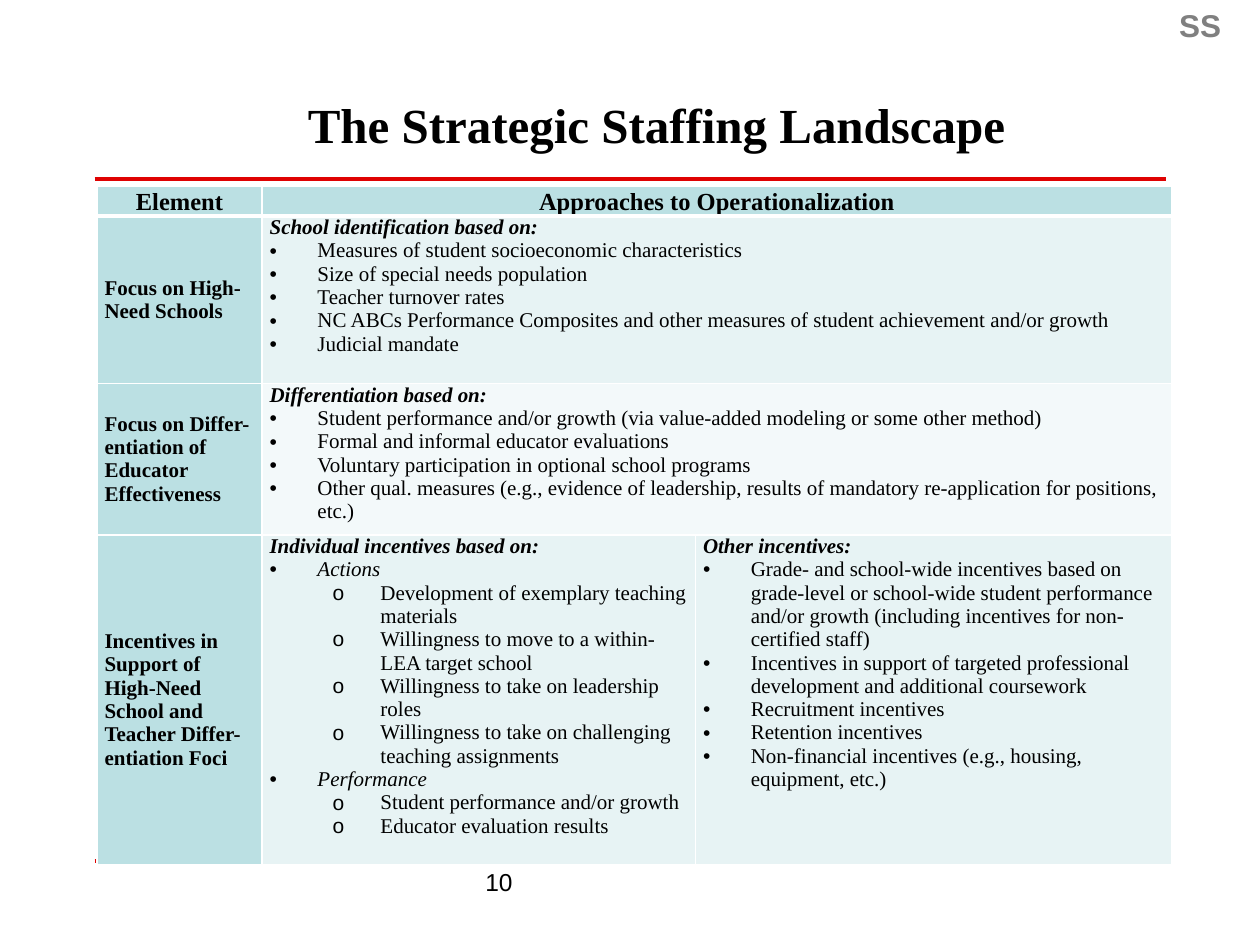
from lxml.etree import SubElement
from pptx import Presentation
from pptx.dml.color import RGBColor
from pptx.enum.shapes import MSO_CONNECTOR
from pptx.enum.text import MSO_ANCHOR, PP_ALIGN
from pptx.oxml import parse_xml
from pptx.oxml.ns import nsdecls, qn
from pptx.util import Inches, Pt

# Content: table cells hold (style, text) lines
SERIF, SANS = "Times New Roman", "Arial"
TITLE = "The Strategic Staffing Landscape"
HEADERS = ["Element", "Approaches to Operationalization"]
ROWS = [
    ("Focus on High-Need Schools", "E7F3F4", [[
        ("lead", "School identification based on:"),
        ("item", "Measures of student socioeconomic characteristics"),
        ("item", "Size of special needs population"),
        ("item", "Teacher turnover rates"),
        ("item", "NC ABCs Performance Composites and other measures of "
                 "student achievement and/or growth"),
        ("item", "Judicial mandate"),
    ]]),
    ("Focus on Differ-entiation of Educator Effectiveness", "F3F9FA", [[
        ("lead", "Differentiation based on:"),
        ("item", "Student performance and/or growth (via value-added "
                 "modeling or some other method)"),
        ("item", "Formal and informal educator evaluations"),
        ("item", "Voluntary participation in optional school programs"),
        ("item", "Other qual. measures (e.g., evidence of leadership, results "
                 "of mandatory re-application for positions, etc.)"),
    ]]),
    ("Incentives in Support of High-Need School and Teacher "
     "Differ-entiation Foci", "E7F3F4", [[
         ("lead", "Individual incentives based on:"),
         ("group", "Actions"),
         ("sub", "Development of exemplary teaching materials"),
         ("sub", "Willingness to move to a within-LEA target school"),
         ("sub", "Willingness to take on leadership roles"),
         ("sub", "Willingness to take on challenging teaching assignments"),
         ("group", "Performance"),
         ("sub", "Student performance and/or growth"),
         ("sub", "Educator evaluation results"),
     ], [
         ("lead", "Other incentives:"),
         ("item", "Grade- and school-wide incentives based on grade-level or "
                  "school-wide student performance and/or growth (including "
                  "incentives for non-certified staff)"),
         ("item", "Incentives in support of targeted professional "
                  "development and additional coursework"),
         ("item", "Recruitment incentives"),
         ("item", "Retention incentives"),
         ("item", "Non-financial incentives (e.g., housing, equipment, etc.)"),
     ]]),
]

# style: size, bold, italic, level, bullet
STYLES = {
    "header": (14, True, False, 0, None),
    "element": (12, True, False, 0, None),
    "lead": (12, True, True, 0, None),
    "item": (12, False, False, 0, "•"),
    "group": (12, False, True, 0, "•"),
    "sub": (12, False, False, 1, "o"),
}
COLUMN_WIDTHS = [1.31, 3.44, 3.78]
ROW_HEIGHTS = [0.19, 1.33, 1.15, 2.62]
TEAL, RED, BLACK, GRAY = "BBE0E3", "DF0202", "000000", "808080"


def color(hex_code):
    return RGBColor.from_string(hex_code)


def set_font(run, name, size, hex_code=BLACK, bold=False, italic=False):
    run.font.name, run.font.size = name, Pt(size)
    run.font.bold, run.font.italic = bold, italic
    run.font.color.rgb = color(hex_code)


def add_label(text, left, top, width, height, anchor, *font):
    frame = slide.shapes.add_textbox(
        Inches(left), Inches(top), Inches(width), Inches(height)).text_frame
    frame.word_wrap = True
    frame.vertical_anchor = anchor
    frame.text = text
    frame.paragraphs[0].alignment = PP_ALIGN.CENTER
    set_font(frame.paragraphs[0].runs[0], *font)


def add_bullet(paragraph, mark, level):
    props = paragraph._p.get_or_add_pPr()
    props.set("marL", str(Inches(0.38 + 0.5 * level)))
    props.set("indent", str(-Inches(0.38)))
    SubElement(props, qn("a:buFont")).set("typeface", SANS)
    SubElement(props, qn("a:buChar")).set("char", mark)


def fill_cell(cell, lines, align=PP_ALIGN.LEFT, anchor=MSO_ANCHOR.TOP):
    cell.vertical_anchor = anchor
    cell.text_frame.text = "\n".join(text for _, text in lines)
    for paragraph, (style, _) in zip(cell.text_frame.paragraphs, lines):
        size, bold, italic, level, mark = STYLES[style]
        paragraph.alignment = align
        paragraph.level = level
        if mark:
            add_bullet(paragraph, mark, level)
        set_font(paragraph.runs[0], SERIF, size, BLACK, bold, italic)


def format_cell(cell, fill, top_width, bottom_width):
    cell.margin_left = cell.margin_right = Inches(0.06)
    cell.margin_top = cell.margin_bottom = 0
    cell.fill.solid()
    cell.fill.fore_color.rgb = color(fill)
    sides = [("L", 1), ("R", 1), ("T", top_width), ("B", bottom_width)]
    for place, (side, width) in enumerate(sides):
        cell._tc.get_or_add_tcPr().insert(place, parse_xml(
            f'<a:ln{side} {nsdecls("a")} w="{Pt(width)}"><a:solidFill>'
            f'<a:srgbClr val="FFFFFF"/></a:solidFill></a:ln{side}>'))


prs = Presentation()
prs.slide_width, prs.slide_height = Inches(10), Inches(7.5)
slide = prs.slides.add_slide(prs.slide_layouts[6])

# Red rules above and below the table
for y in (1.42, 6.83):
    rule = slide.shapes.add_connector(
        MSO_CONNECTOR.STRAIGHT, Inches(0.75), Inches(y), Inches(9.25), Inches(y))
    rule.line.color.rgb = color(RED)
    rule.line.width = Pt(2.25)
    SubElement(rule._element.spPr, qn("a:effectLst"))

# Title
add_label(TITLE, 1.17, 0.63, 8.08, 0.7, MSO_ANCHOR.MIDDLE, SERIF, 28, BLACK, True)

# Table grid
table = slide.shapes.add_table(
    len(ROW_HEIGHTS), len(COLUMN_WIDTHS), Inches(0.77), Inches(1.48),
    Inches(sum(COLUMN_WIDTHS)), Inches(sum(ROW_HEIGHTS))).table
for column, width in zip(table.columns, COLUMN_WIDTHS):
    column.width = Inches(width)
for row, height in zip(table.rows, ROW_HEIGHTS):
    row.height = Inches(height)
body_fills = [TEAL] + [fill for _, fill, _ in ROWS]
for r, body_fill in enumerate(body_fills):
    for c in range(len(COLUMN_WIDTHS)):
        format_cell(table.cell(r, c), body_fill if c else TEAL,
                    3 if r == 1 else 1, 3 if r == 0 else 1)

# Table text
table.cell(0, 1).merge(table.cell(0, 2))
for c, header in enumerate(HEADERS):
    fill_cell(table.cell(0, c), [("header", header)],
              PP_ALIGN.CENTER, MSO_ANCHOR.BOTTOM)
for r, (element, _, approaches) in enumerate(ROWS, 1):
    fill_cell(table.cell(r, 0), [("element", element)], anchor=MSO_ANCHOR.MIDDLE)
    if len(approaches) == 1:
        table.cell(r, 1).merge(table.cell(r, 2))
    for c, lines in enumerate(approaches, 1):
        fill_cell(table.cell(r, c), lines)

# Page number and corner mark
add_label("10", 2.5, 6.83, 2.92, 0.5, MSO_ANCHOR.TOP, SANS, 14)
add_label("SS", 9.05, 0, 0.95, 0.4, MSO_ANCHOR.TOP, SANS, 18, GRAY, True)

prs.save("out.pptx")
